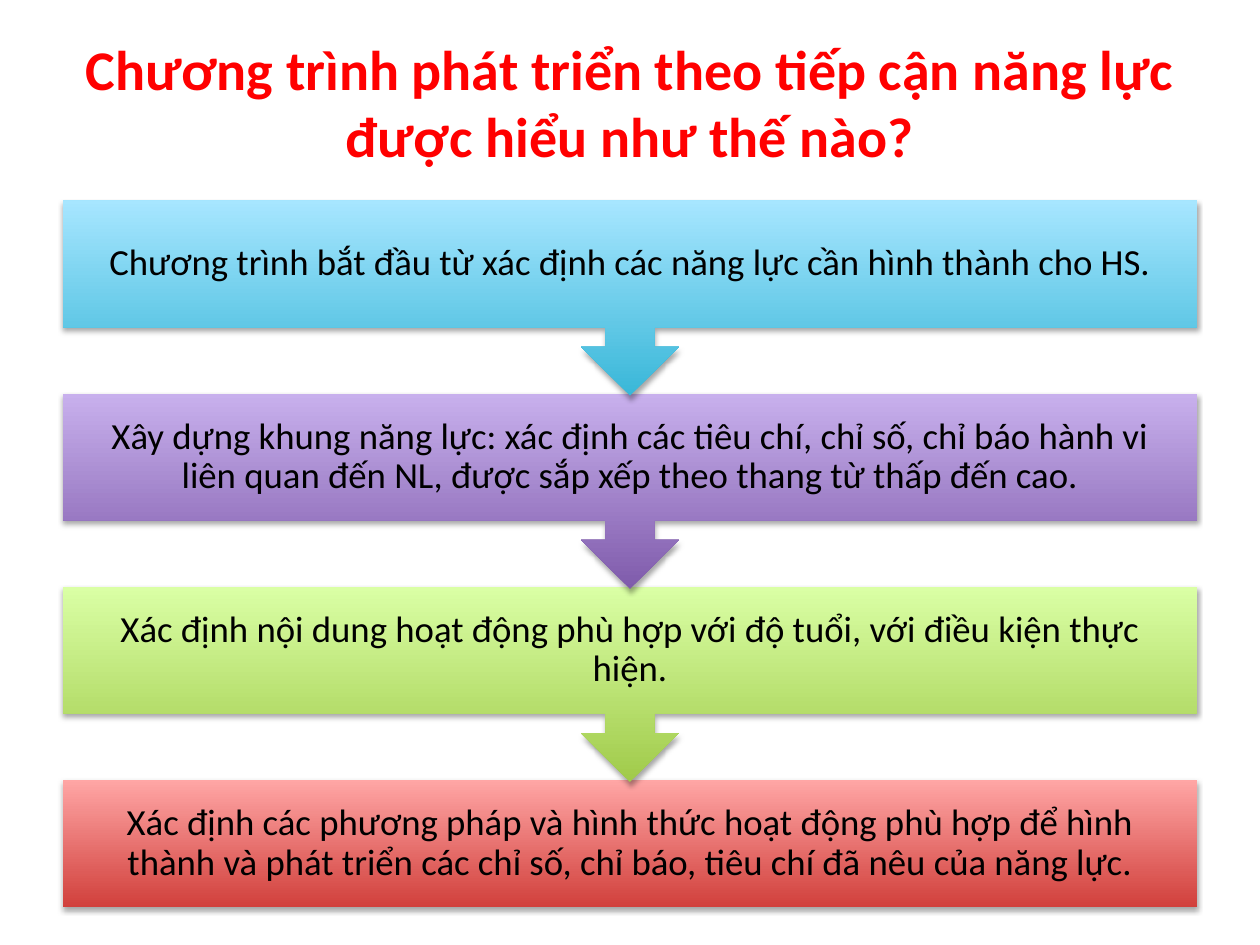
import pptx
import pptx.dml.color
import pptx.enum.shapes
import pptx.enum.text
import pptx.oxml
import pptx.oxml.ns
import pptx.util

RGBColor = pptx.dml.color.RGBColor
Shapes = pptx.enum.shapes.MSO_SHAPE

RED = RGBColor(0xFF, 0x00, 0x00)
BLACK = RGBColor(0x00, 0x00, 0x00)
BLUE = (RGBColor(0x39, 0xB7, 0xD8), RGBColor(0xA7, 0xE6, 0xFF))
PURPLE = (RGBColor(0x7F, 0x5B, 0xAB), RGBColor(0xC8, 0xB0, 0xED))
GREEN = (RGBColor(0xA0, 0xCA, 0x4A), RGBColor(0xDA, 0xFF, 0xA5))
CORAL = (RGBColor(0xD1, 0x40, 0x3C), RGBColor(0xFF, 0xA6, 0xA5))

TITLE = "Chương trình phát triển theo tiếp cận năng lực được hiểu như thế nào?"
STEPS = [
    ("Chương trình bắt đầu từ xác định các năng lực cần hình thành cho HS.", BLUE),
    ("Xây dựng khung năng lực: xác định các tiêu chí, chỉ số, chỉ báo hành vi "
     "liên quan đến NL, được sắp xếp theo thang từ thấp đến cao.", PURPLE),
    ("Xác định nội dung hoạt động phù hợp với độ tuổi, với điều kiện thực hiện.", GREEN),
    ("Xác định các phương pháp và hình thức hoạt động phù hợp để hình thành và "
     "phát triển các chỉ số, chỉ báo, tiêu chí đã nêu của năng lực.", CORAL),
]

SHADOW = (
    '<a:outerShdw %s blurRad="39370" dist="22860" dir="5400000" rotWithShape="0">'
    '<a:srgbClr val="000000"><a:alpha val="35000"/></a:srgbClr></a:outerShdw>'
    % pptx.oxml.ns.nsdecls("a")
)


class FlowSlide:
    font_name = "Calibri"
    margin = 0.5
    width = 9
    first_top = 1.59
    last_top = 6.19
    row_pitch = (last_top - first_top) / (len(STEPS) - 1)
    box_height = 1.01
    callout_height = 1.55
    inset = 0.16

    def __init__(self, presentation):
        self.slide = presentation.slides.add_slide(presentation.slide_layouts[5])

    def set_text(self, shape, text, size, color, bold=False):
        frame = shape.text_frame
        frame.text = text
        frame.word_wrap = True
        frame.vertical_anchor = pptx.enum.text.MSO_ANCHOR.MIDDLE
        paragraph = frame.paragraphs[0]
        paragraph.alignment = pptx.enum.text.PP_ALIGN.CENTER
        paragraph.font.name = self.font_name
        paragraph.font.size = pptx.util.Pt(size)
        paragraph.font.bold = bold
        paragraph.font.color.rgb = color
        return frame

    def title(self, text):
        shape = self.slide.shapes.title
        shape.left, shape.top, shape.width, shape.height = map(
            pptx.util.Inches, (self.margin, 0.18, self.width, 1.25))
        self.set_text(shape, text, 32, RED, bold=True)

    def step(self, row, text, colors, is_last):
        kind = Shapes.RECTANGLE if is_last else Shapes.DOWN_ARROW_CALLOUT
        height = self.box_height if is_last else self.callout_height
        top = self.first_top + row * self.row_pitch
        shape = self.slide.shapes.add_shape(
            kind, *map(pptx.util.Inches, (self.margin, top, self.width, height)))
        shape.line.fill.background()
        shape.fill.gradient()
        shape.fill.gradient_angle = 90
        for stop, color in zip(shape.fill.gradient_stops, colors):
            stop.color.rgb = color
        shape.shadow.inherit = False
        effects = shape._element.spPr.find(pptx.oxml.ns.qn("a:effectLst"))
        effects.append(pptx.oxml.parse_xml(SHADOW))
        frame = self.set_text(shape, text, 21, BLACK)
        frame.paragraphs[0].line_spacing = 0.9
        inset = pptx.util.Inches(self.inset)
        frame.margin_left = frame.margin_right = inset
        frame.margin_top = frame.margin_bottom = inset


def main():
    presentation = pptx.Presentation()
    presentation.slide_width = pptx.util.Inches(10)
    presentation.slide_height = pptx.util.Inches(7.5)
    flow = FlowSlide(presentation)
    flow.title(TITLE)
    last_row = len(STEPS) - 1
    for row, (text, colors) in reversed(list(enumerate(STEPS))):
        flow.step(row, text, colors, row == last_row)
    presentation.save("out.pptx")


if __name__ == "__main__":
    main()
